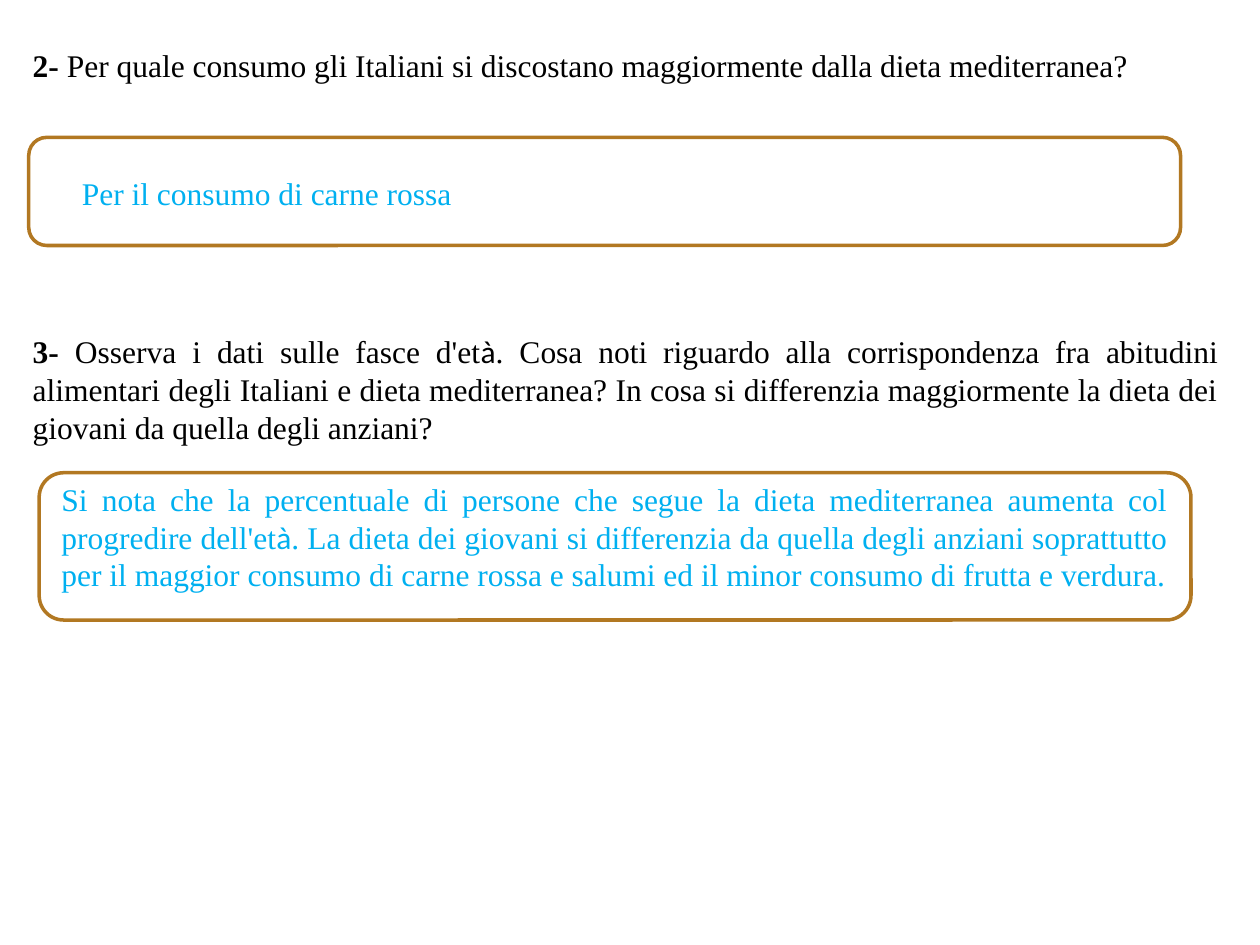
from pptx import Presentation
from pptx.dml.color import RGBColor
from pptx.enum import shapes, text
from pptx.util import Cm, Pt

BLACK, WHITE, BROWN, BLUE = "000000", "FFFFFF", "B27822", "00B0F0"
SERIF, SANS = "Times New Roman", "Calibri"
ACCENT = "à"
FRAME_WIDTH = 23.22


def colour(value):
    return RGBColor.from_string(value)


def add_span(para, words, font=SERIF, ink=BLACK, bold=False):
    span = para.add_run()
    span.text = words
    span.font.name = font
    span.font.size = Pt(18)
    span.font.bold = bold
    span.font.color.rgb = colour(ink)


def add_text(page, words, left, top, width, height, ink=BLACK, label="",
             justify=False, wrap=True):
    """Place a paragraph with an optional bold label; accents are in the sans font."""
    box = page.shapes.add_textbox(Cm(left), Cm(top), Cm(width), Cm(height))
    frame = box.text_frame
    frame.word_wrap = wrap
    frame.auto_size = text.MSO_AUTO_SIZE.SHAPE_TO_FIT_TEXT
    frame.vertical_anchor = text.MSO_ANCHOR.MIDDLE
    para = frame.paragraphs[0]
    para.alignment = text.PP_ALIGN.JUSTIFY if justify else text.PP_ALIGN.LEFT
    if label:
        add_span(para, label, ink=ink, bold=True)
    before, accent, after = words.partition(ACCENT)
    add_span(para, before, ink=ink)
    if accent:
        add_span(para, accent, font=SANS, ink=ink)
        add_span(para, after, ink=ink)


def add_answer(page, words, left, top, height, inset, drop, width, text_height,
               justify=False):
    """Draw the rounded frame, with the text offset from its top left corner."""
    frame = page.shapes.add_shape(shapes.MSO_SHAPE.ROUNDED_RECTANGLE,
                                  Cm(left), Cm(top), Cm(FRAME_WIDTH), Cm(height))
    frame.shadow.inherit = False
    frame.fill.solid()
    frame.fill.fore_color.rgb = colour(WHITE)
    frame.line.color.rgb = colour(BROWN)
    frame.line.width = Pt(2)
    add_text(page, words, left + inset, top + drop, width, text_height,
             ink=BLUE, justify=justify)


def main():
    deck = Presentation()
    deck.slide_width, deck.slide_height = Cm(25.4), Cm(19.05)
    page = deck.slides.add_slide(deck.slide_layouts[6])

    add_text(page, "Per quale consumo gli Italiani si discostano maggiormente "
             "dalla dieta mediterranea?",
             0.41, 0.79, 22.83, 1.02, label="2- ", wrap=False)
    add_answer(page, "Per il consumo di carne rossa", 0.58, 2.77, 2.18,
               inset=0.82, drop=0.61, width=22.02, text_height=1.02)

    add_text(page, "Osserva i dati sulle fasce d'età. Cosa noti riguardo alla "
             "corrispondenza fra abitudini alimentari degli Italiani e dieta "
             "mediterranea? In cosa si differenzia maggiormente la dieta dei "
             "giovani da quella degli anziani?",
             0.41, 6.55, 24.41, 2.57, label="3- ", justify=True)
    add_answer(page, "Si nota che la percentuale di persone che segue la dieta "
               "mediterranea aumenta col progredire dell'età. La dieta dei "
               "giovani si differenzia da quella degli anziani soprattutto per "
               "il maggior consumo di carne rossa e salumi ed il minor consumo "
               "di frutta e verdura.", 0.79, 9.53, 2.97,
               inset=0.2, drop=0, width=22.81, text_height=2.57, justify=True)

    deck.save("out.pptx")


if __name__ == "__main__":
    main()
